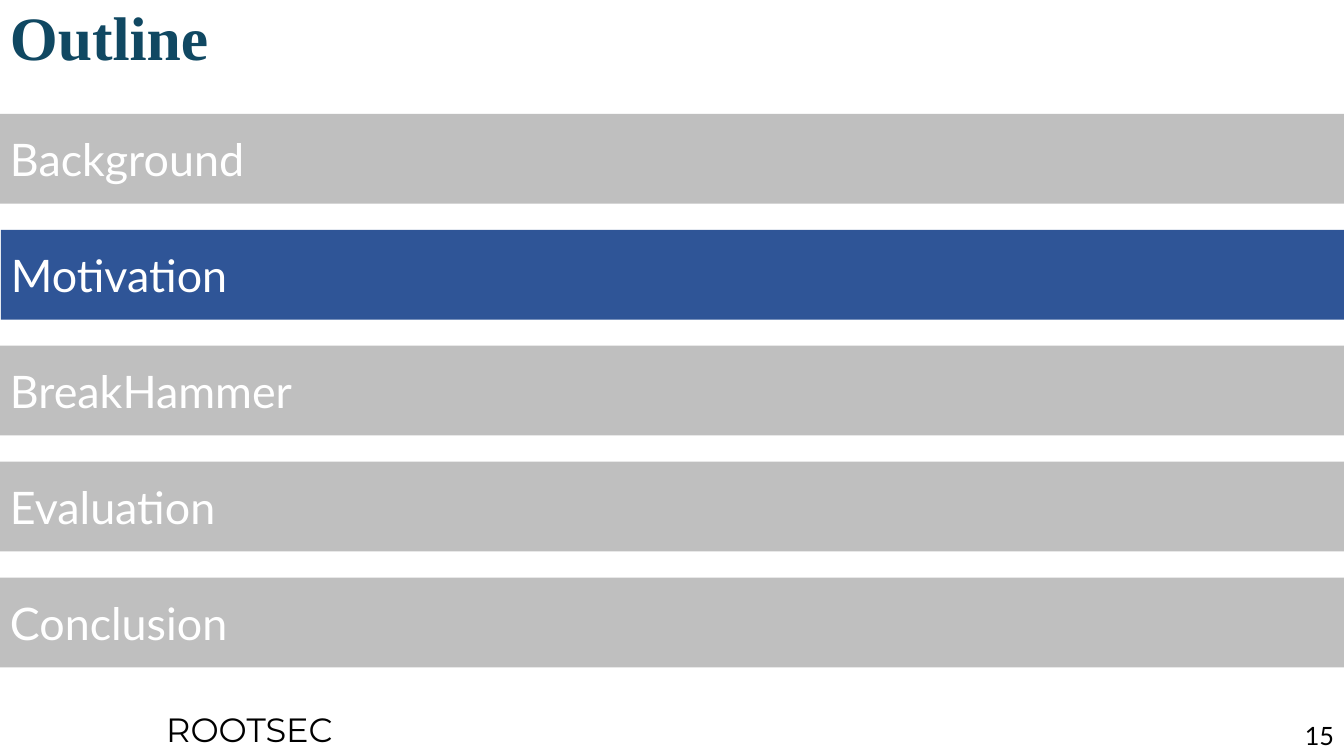
from dataclasses import dataclass

from pptx import Presentation
from pptx.dml.color import RGBColor
from pptx.enum.shapes import MSO_SHAPE
from pptx.enum.text import MSO_ANCHOR, PP_ALIGN
from pptx.util import Pt

RECTANGLE = MSO_SHAPE.RECTANGLE
TOP, MIDDLE = MSO_ANCHOR.TOP, MSO_ANCHOR.MIDDLE
LEFT, RIGHT = PP_ALIGN.LEFT, PP_ALIGN.RIGHT

EMU_PER_PX = 9144  # 100 px to the inch
SLIDE_WIDTH, SLIDE_HEIGHT = 1333, 750

SECTIONS = ["Background", "Motivation", "BreakHammer", "Evaluation", "Conclusion"]
CURRENT_SECTION = "Motivation"


@dataclass(frozen=True)
class TextStyle:
    font: str
    size: int
    color: str
    bold: bool = False


@dataclass(frozen=True)
class Theme:
    title: TextStyle = TextStyle("Times New Roman", 44, "104862", True)
    section: TextStyle = TextStyle("Lato", 32, "FFFFFF")
    group: TextStyle = TextStyle("Montserrat", 24, "000000")
    number: TextStyle = TextStyle("Lato", 18, "000000")
    bar: str = "BFBFBF"
    current_bar: str = "2F5597"


THEME = Theme()


def emu(*lengths):
    return [length * EMU_PER_PX for length in lengths]


def write(shape, text, style, align=LEFT, anchor=TOP, wrap=True):
    frame = shape.text_frame
    frame.word_wrap = wrap
    frame.vertical_anchor = anchor
    paragraph = frame.paragraphs[0]
    paragraph.text = text
    paragraph.alignment = align
    font = paragraph.font
    font.name, font.size, font.bold = style.font, Pt(style.size), style.bold
    font.color.rgb = RGBColor.from_string(style.color)
    return paragraph


def add_title(slide, left, top, width, height):
    box = slide.shapes.add_textbox(*emu(left, top, width, height))
    write(box, "Outline", THEME.title, anchor=MIDDLE).line_spacing = 0.9


def add_sections(slide, left, top, width, height):
    """Stack one bar per section, evenly spaced, with the current one highlighted."""
    bar_height = 89
    pitch = (height - bar_height) // (len(SECTIONS) - 1)
    for index, section in enumerate(SECTIONS):
        is_current = section == CURRENT_SECTION
        bar_left = left + 1 if is_current else left
        bar = slide.shapes.add_shape(
            RECTANGLE, *emu(bar_left, top + index * pitch, width, bar_height))
        bar.shadow.inherit = False
        bar.fill.solid()
        color = THEME.current_bar if is_current else THEME.bar
        bar.fill.fore_color.rgb = RGBColor.from_string(color)
        bar.line.fill.background()
        write(bar, section, THEME.section, anchor=MIDDLE)


def add_footer(slide, left, top, width, height):
    group = slide.shapes.add_textbox(*emu(left + 155, top, 191, height))
    write(group, "ROOTSEC", THEME.group, wrap=False)
    number_width, number_top = 75, 12
    number = slide.shapes.add_textbox(
        *emu(left + width - number_width, top + number_top, number_width, 40))
    write(number, "15", THEME.number, align=RIGHT)


def main():
    presentation = Presentation()
    presentation.slide_width, presentation.slide_height = emu(SLIDE_WIDTH, SLIDE_HEIGHT)
    slide = presentation.slides.add_slide(presentation.slide_layouts[6])
    add_title(slide, 0, 0, SLIDE_WIDTH, 80)
    add_sections(slide, 0, 113, SLIDE_WIDTH, 549)
    add_footer(slide, 0, 698, SLIDE_WIDTH, 50)
    presentation.save("out.pptx")


if __name__ == "__main__":
    main()
